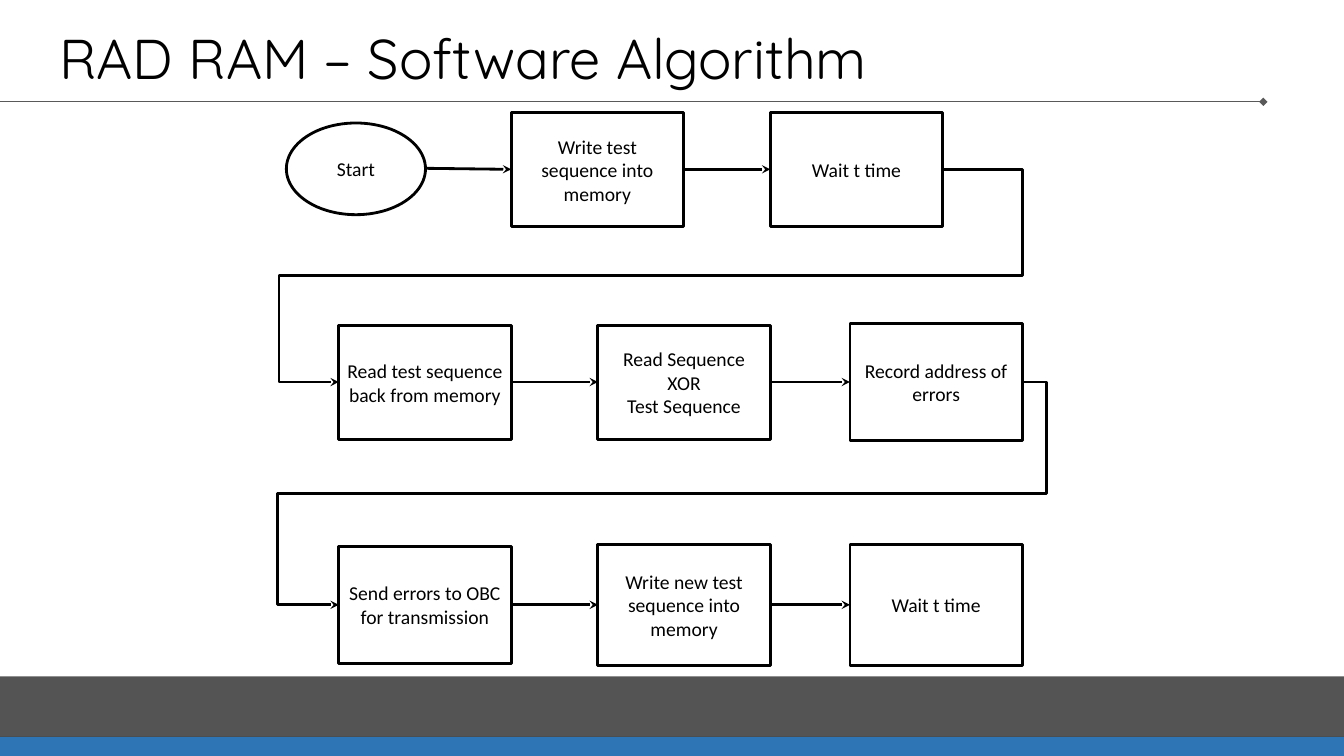
from dataclasses import dataclass
from typing import Optional

from lxml.etree import SubElement
from pptx import Presentation
from pptx.dml.color import RGBColor
from pptx.enum.shapes import MSO_CONNECTOR, MSO_SHAPE
from pptx.enum.text import MSO_ANCHOR, PP_ALIGN
from pptx.oxml.ns import qn
from pptx.util import Pt

EMU_PER_PX = 9144
WIDTH, HEIGHT = 1333, 750
COLORS = {
    "ink": "000000",
    "paper": "FFFFFF",
    "rule": "595959",
    "accent": "2E75B6",
}


@dataclass
class Detour:
    outer: int
    inner: int


@dataclass
class Step:
    lines: tuple[str, ...]
    left: int
    top: int
    height: int
    width: int = 171
    outline: MSO_SHAPE = MSO_SHAPE.RECTANGLE
    detour: Optional[Detour] = None

    @property
    def right(self) -> int:
        return self.left + self.width

    @property
    def middle(self) -> int:
        return self.top + self.height // 2


@dataclass
class Band:
    top: int
    height: int
    color: str
    opacity: int = 100


BANDS = [
    Band(731, 20, "accent"),
    Band(671, 60, "ink", opacity=67),
]

STEPS = [
    Step(("Start",), 284, 122, 91, width=138, outline=MSO_SHAPE.OVAL),
    Step(("Write test sequence into memory",), 507, 112, 113),
    Step(("Wait t time",), 764, 112, 113, detour=Detour(1014, 277)),
    Step(("Read test sequence back from memory",), 336, 323, 113),
    Step(("Read Sequence XOR", "Test Sequence"), 593, 323, 113),
    Step(("Record address of errors",), 843, 321, 116, detour=Detour(1038, 275)),
    Step(("Send errors to OBC for transmission",), 336, 542, 116),
    Step(("Write new test sequence into memory",), 593, 540, 120),
    Step(("Wait t time",), 843, 540, 120),
]


def px(length: int) -> int:
    return length * EMU_PER_PX


def rgb(name: str) -> RGBColor:
    return RGBColor.from_string(COLORS[name])


def add_text(paragraph, text: str, font: str, size: int) -> None:
    run = paragraph.add_run()
    run.text = text
    run.font.name = font
    run.font.size = Pt(size)
    run.font.color.rgb = rgb("ink")


def draw_line(slide, kind: MSO_CONNECTOR, start: tuple[int, int], end: tuple[int, int],
              color: str, weight: int, tip: str):
    line = slide.shapes.add_connector(kind, *map(px, start + end))
    line.line.color.rgb = rgb(color)
    line.line.width = Pt(weight)
    SubElement(line.line._get_or_add_ln(), qn("a:tailEnd"), type=tip)
    SubElement(line._element.spPr, qn("a:effectLst"))
    return line


def draw_band(slide, band: Band) -> None:
    strip = slide.shapes.add_shape(
        MSO_SHAPE.RECTANGLE, 0, px(band.top), px(WIDTH), px(band.height))
    strip.shadow.inherit = False
    strip.fill.solid()
    strip.fill.fore_color.rgb = rgb(band.color)
    strip.line.fill.background()
    if band.opacity < 100:
        fill_color = strip._element.spPr.find(f"{qn('a:solidFill')}/{qn('a:srgbClr')}")
        SubElement(fill_color, qn("a:alpha"), val=str(band.opacity * 1000))


def draw_title(slide, text: str) -> None:
    title = slide.shapes.add_textbox(px(49), px(13), px(1199), px(83))
    frame = title.text_frame
    frame.word_wrap = True
    frame.vertical_anchor = MSO_ANCHOR.BOTTOM
    frame.paragraphs[0].line_spacing = 0.9
    add_text(frame.paragraphs[0], text, "Quicksand", 40)


def draw_step(slide, step: Step) -> None:
    node = slide.shapes.add_shape(
        step.outline, px(step.left), px(step.top), px(step.width), px(step.height))
    node.shadow.inherit = False
    node.fill.solid()
    node.fill.fore_color.rgb = rgb("paper")
    node.line.color.rgb = rgb("ink")
    node.line.width = Pt(2)
    frame = node.text_frame
    frame.word_wrap = True
    frame.vertical_anchor = MSO_ANCHOR.MIDDLE
    frame.margin_left = frame.margin_right = px(7)
    frame.margin_top = frame.margin_bottom = px(4)
    for index, text in enumerate(step.lines):
        paragraph = frame.add_paragraph() if index else frame.paragraphs[0]
        paragraph.alignment = PP_ALIGN.CENTER
        add_text(paragraph, text, "Calibri", 14)


def draw_flow(slide, source: Step, target: Step) -> None:
    kind = MSO_CONNECTOR.ELBOW if source.detour else MSO_CONNECTOR.STRAIGHT
    arrow = draw_line(slide, kind, (source.right, source.middle),
                      (target.left, target.middle), "ink", 2, "stealth")
    if source.detour:
        span = source.right - target.left
        bends = (
            (source.right - source.detour.outer) / span,
            0.5,
            (source.right - source.detour.inner) / span,
        )
        geometry = arrow._element.spPr.find(qn("a:prstGeom"))
        geometry.set("prst", "bentConnector5")
        guides = geometry.find(qn("a:avLst"))
        for number, bend in enumerate(bends, start=1):
            SubElement(guides, qn("a:gd"), name=f"adj{number}",
                       fmla=f"val {round(bend * 100000)}")


def main() -> None:
    deck = Presentation()
    deck.slide_width, deck.slide_height = px(WIDTH), px(HEIGHT)
    slide = deck.slides.add_slide(deck.slide_layouts[6])
    draw_line(slide, MSO_CONNECTOR.STRAIGHT, (0, 101), (1253, 101), "rule", 1, "diamond")
    for band in BANDS:
        draw_band(slide, band)
    draw_title(slide, "RAD RAM – Software Algorithm")
    for step in STEPS:
        draw_step(slide, step)
    for source, target in zip(STEPS, STEPS[1:]):
        draw_flow(slide, source, target)
    deck.save("out.pptx")


if __name__ == "__main__":
    main()
